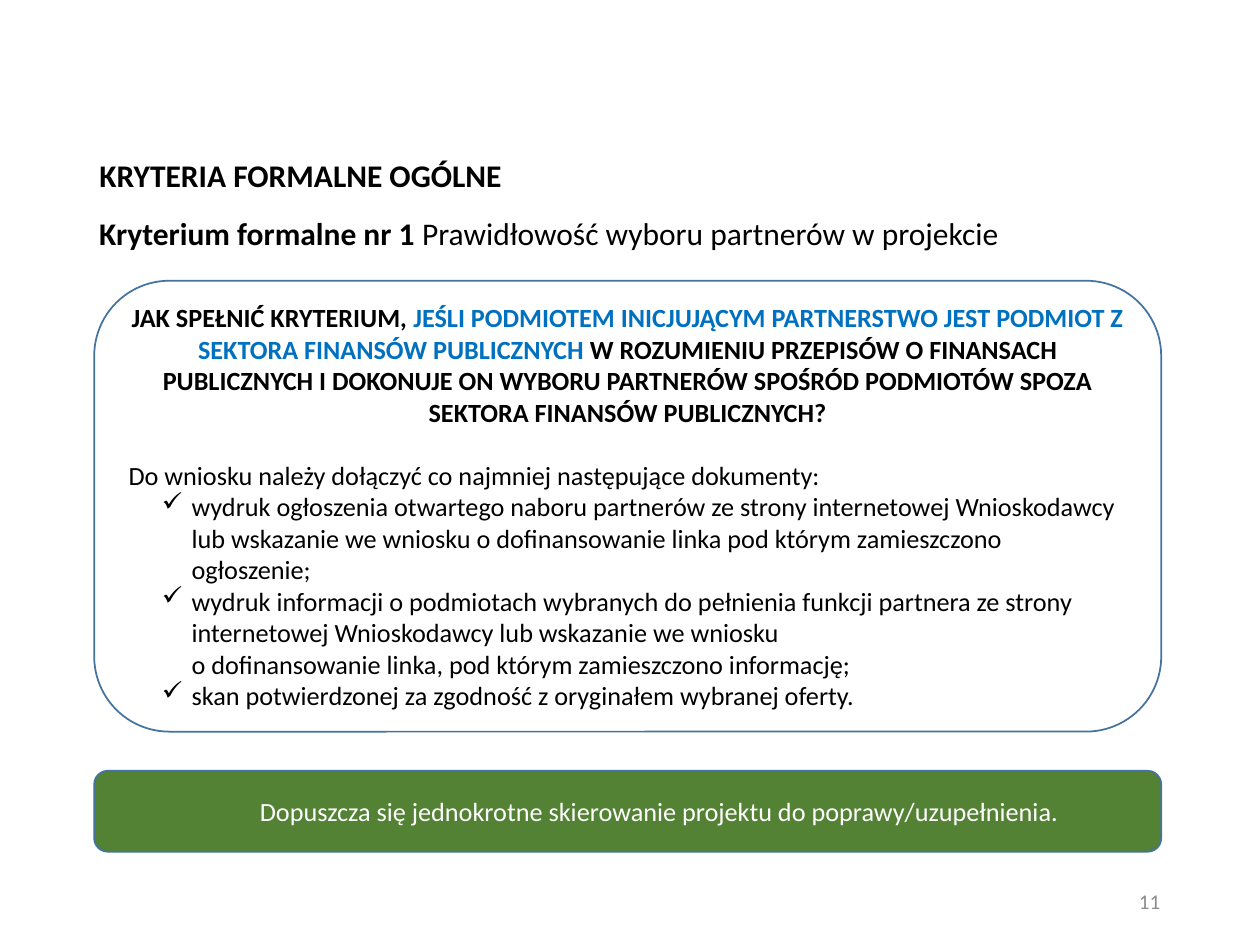
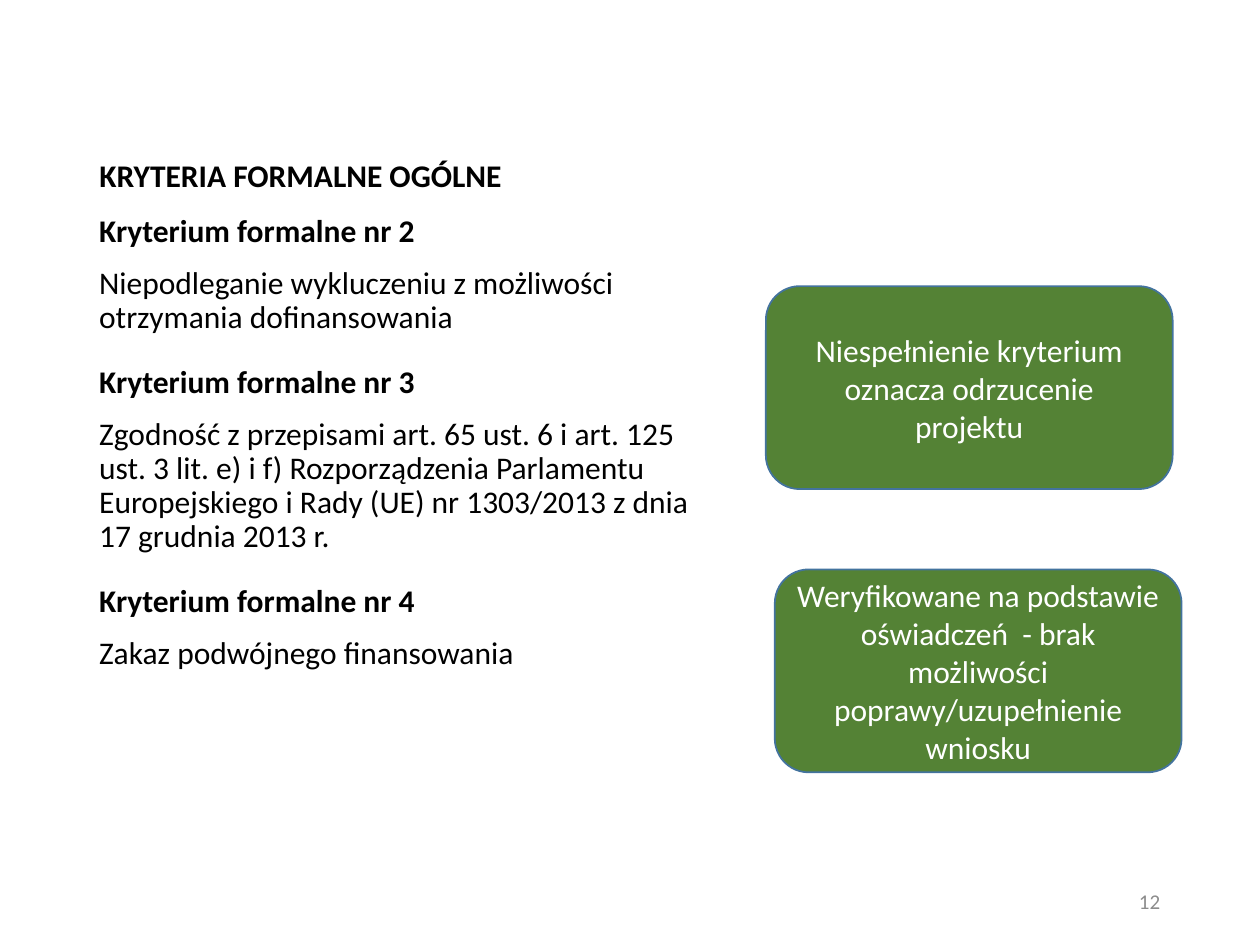
from dataclasses import dataclass

from lxml.etree import SubElement
from pptx import Presentation
from pptx.dml.color import RGBColor
from pptx.enum.shapes import MSO_SHAPE
from pptx.enum.text import MSO_ANCHOR, MSO_AUTO_SIZE, PP_ALIGN
from pptx.oxml.ns import qn
from pptx.util import Cm, Pt


@dataclass(frozen=True)
class Theme:
    font: str = "Calibri"
    ink: RGBColor = RGBColor(0x00, 0x00, 0x00)
    paper: RGBColor = RGBColor(0xFF, 0xFF, 0xFF)
    accent: RGBColor = RGBColor(0x00, 0x70, 0xC0)
    green: RGBColor = RGBColor(0x54, 0x82, 0x35)
    outline: RGBColor = RGBColor(0x43, 0x73, 0x9E)
    muted: RGBColor = RGBColor(0x8C, 0x8C, 0x8C)
    outline_width: int = Pt(1)
    heading_size: int = Pt(18)
    detail_size: int = Pt(15)
    number_size: int = Pt(12)
    tight: float = 0.9


@dataclass(frozen=True)
class Paragraph:
    runs: tuple
    align: PP_ALIGN = PP_ALIGN.LEFT
    before: int = 0
    left: int = 0
    hanging: int = 0
    bullet: str = ""
    spacing: float = 1.0


THEME = Theme()
INDENT = Cm(1.27)
HANGING = Cm(0.6)

SECTION = "KRYTERIA FORMALNE OGÓLNE"
FIRST_NUMBER = 11

CRITERION_1 = (
    ("Kryterium formalne nr 1", True),
    (" Prawidłowość wyboru partnerów w projekcie", False),
)
QUESTION = (
    ("JAK SPEŁNIĆ KRYTERIUM, ", True),
    ("JEŚLI PODMIOTEM INICJUJĄCYM PARTNERSTWO JEST PODMIOT Z SEKTORA "
     "FINANSÓW PUBLICZNYCH", True, THEME.accent),
    (" W ROZUMIENIU PRZEPISÓW O FINANSACH PUBLICZNYCH I DOKONUJE ON WYBORU "
     "PARTNERÓW SPOŚRÓD PODMIOTÓW SPOZA SEKTORA FINANSÓW PUBLICZNYCH?", True),
)
DOCUMENTS_INTRO = "Do wniosku należy dołączyć co najmniej następujące dokumenty:"
DOCUMENTS = [
    "wydruk ogłoszenia otwartego naboru partnerów ze strony internetowej "
    "Wnioskodawcy lub wskazanie we wniosku o dofinansowanie linka pod którym "
    "zamieszczono ogłoszenie;",
    "wydruk informacji o podmiotach wybranych do pełnienia funkcji partnera ze "
    "strony internetowej Wnioskodawcy lub wskazanie we wniosku \n"
    "o dofinansowanie linka, pod którym zamieszczono informację;",
    "skan potwierdzonej za zgodność z oryginałem wybranej oferty.",
]
CORRECTION = "Dopuszcza się jednokrotne skierowanie projektu do poprawy/uzupełnienia."

CRITERIA = [
    ("Kryterium formalne nr 2",
     "Niepodleganie wykluczeniu z możliwości otrzymania dofinansowania"),
    ("Kryterium formalne nr 3",
     "Zgodność z przepisami art. 65 ust. 6 i art. 125 ust. 3 lit. e) i f) "
     "Rozporządzenia Parlamentu Europejskiego i Rady (UE) nr 1303/2013 z dnia "
     "17 grudnia 2013 r."),
    ("Kryterium formalne nr 4", "Zakaz podwójnego finansowania"),
]
CONSEQUENCES = [
    ("Niespełnienie kryterium oznacza odrzucenie projektu", Cm(15.44), Cm(5.77)),
    ("Weryfikowane na podstawie oświadczeń  - brak możliwości "
     "poprawy/uzupełnienie wniosku", Cm(15.62), Cm(11.48)),
]

TITLE_AREA = (Cm(1.75), Cm(2.67), Cm(21.9), Cm(1.8))
NUMBER_AREA = (Cm(17.93), Cm(17.65), Cm(5.71), Cm(1.02))
CRITERION_AREA = (Cm(1.75), Cm(4.27), Cm(21.9), Cm(1.78))
CRITERIA_AREA = (Cm(1.75), Cm(4.22), Cm(12.78), Cm(12.32))
PANEL_LEFT, PANEL_WIDTH = Cm(1.9), Cm(21.51)
QUESTION_AREA = (PANEL_LEFT, Cm(5.66), PANEL_WIDTH, Cm(9.09))
CORRECTION_AREA = (PANEL_LEFT, Cm(15.54), PANEL_WIDTH, Cm(1.63))
CONSEQUENCE_SIZE = (Cm(8.2), Cm(4.09))


def add_run(paragraph, text, bold, color, size):
    run = paragraph.add_run()
    run.text = text
    run.font.name = THEME.font
    run.font.size = size
    run.font.bold = bold
    run.font.color.rgb = color


def write(frame, paragraphs, size, color=THEME.ink, anchor=MSO_ANCHOR.TOP):
    frame.word_wrap = True
    frame.auto_size = MSO_AUTO_SIZE.NONE
    frame.vertical_anchor = anchor
    for index, content in enumerate(paragraphs):
        paragraph = frame.add_paragraph() if index else frame.paragraphs[0]
        paragraph.alignment = content.align
        paragraph.line_spacing = content.spacing
        paragraph.space_before = content.before
        properties = paragraph._p.get_or_add_pPr()
        properties.set("marL", str(content.left))
        properties.set("indent", str(-content.hanging))
        if content.bullet:
            SubElement(properties, qn("a:buChar")).set("char", content.bullet)
        for text, bold, *tint in content.runs:
            for line_index, line in enumerate(text.split("\n")):
                if line_index:
                    paragraph.add_line_break()
                add_run(paragraph, line, bold, tint[0] if tint else color, size)


def add_text(slide, area, paragraphs, size, **style):
    write(slide.shapes.add_textbox(*area).text_frame, paragraphs, size, **style)


def add_panel(slide, area, paragraphs, size, fill=THEME.green, color=THEME.paper):
    panel = slide.shapes.add_shape(MSO_SHAPE.ROUNDED_RECTANGLE, *area)
    panel.shadow.inherit = False
    panel.fill.solid()
    panel.fill.fore_color.rgb = fill
    panel.line.color.rgb = THEME.outline
    panel.line.width = THEME.outline_width
    write(panel.text_frame, paragraphs, size, color, MSO_ANCHOR.MIDDLE)


def add_criteria_slide(deck):
    slide = deck.slides.add_slide(deck.slide_layouts[5])
    title = slide.shapes.title
    title.left, title.top, title.width, title.height = TITLE_AREA
    write(title.text_frame, [Paragraph(((SECTION, True),), spacing=THEME.tight)],
          THEME.heading_size, anchor=MSO_ANCHOR.MIDDLE)
    number = str(FIRST_NUMBER + len(deck.slides) - 1)
    add_text(slide, NUMBER_AREA, [Paragraph(((number, False),), PP_ALIGN.RIGHT)],
             THEME.number_size, color=THEME.muted, anchor=MSO_ANCHOR.MIDDLE)
    return slide


def build_partner_choice(deck):
    slide = add_criteria_slide(deck)
    add_text(slide, CRITERION_AREA, [Paragraph(CRITERION_1, spacing=THEME.tight)],
             THEME.heading_size)
    requirements = [
        Paragraph(QUESTION, PP_ALIGN.CENTER),
        Paragraph(((DOCUMENTS_INTRO, False),), before=Pt(18)),
    ] + [
        Paragraph(((document, False),), left=INDENT, hanging=HANGING, bullet="✓")
        for document in DOCUMENTS
    ]
    add_panel(slide, QUESTION_AREA, requirements, THEME.detail_size,
              THEME.paper, THEME.ink)
    add_panel(slide, CORRECTION_AREA,
              [Paragraph(((CORRECTION, False),), PP_ALIGN.CENTER, left=INDENT)],
              THEME.detail_size)


def build_exclusions(deck):
    slide = add_criteria_slide(deck)
    paragraphs = []
    for name, requirement in CRITERIA:
        gap = Pt(18) if paragraphs else 0
        paragraphs += [
            Paragraph(((name, True),), before=gap, spacing=THEME.tight),
            Paragraph(((requirement, False),), before=Pt(10), spacing=THEME.tight),
        ]
    add_text(slide, CRITERIA_AREA, paragraphs, THEME.heading_size)
    for consequence, left, top in CONSEQUENCES:
        add_panel(slide, (left, top, *CONSEQUENCE_SIZE),
                  [Paragraph(((consequence, False),), PP_ALIGN.CENTER)],
                  THEME.heading_size)


def main():
    deck = Presentation()
    deck.slide_width, deck.slide_height = Cm(25.4), Cm(19.05)
    build_partner_choice(deck)
    build_exclusions(deck)
    deck.save("out.pptx")


if __name__ == "__main__":
    main()
